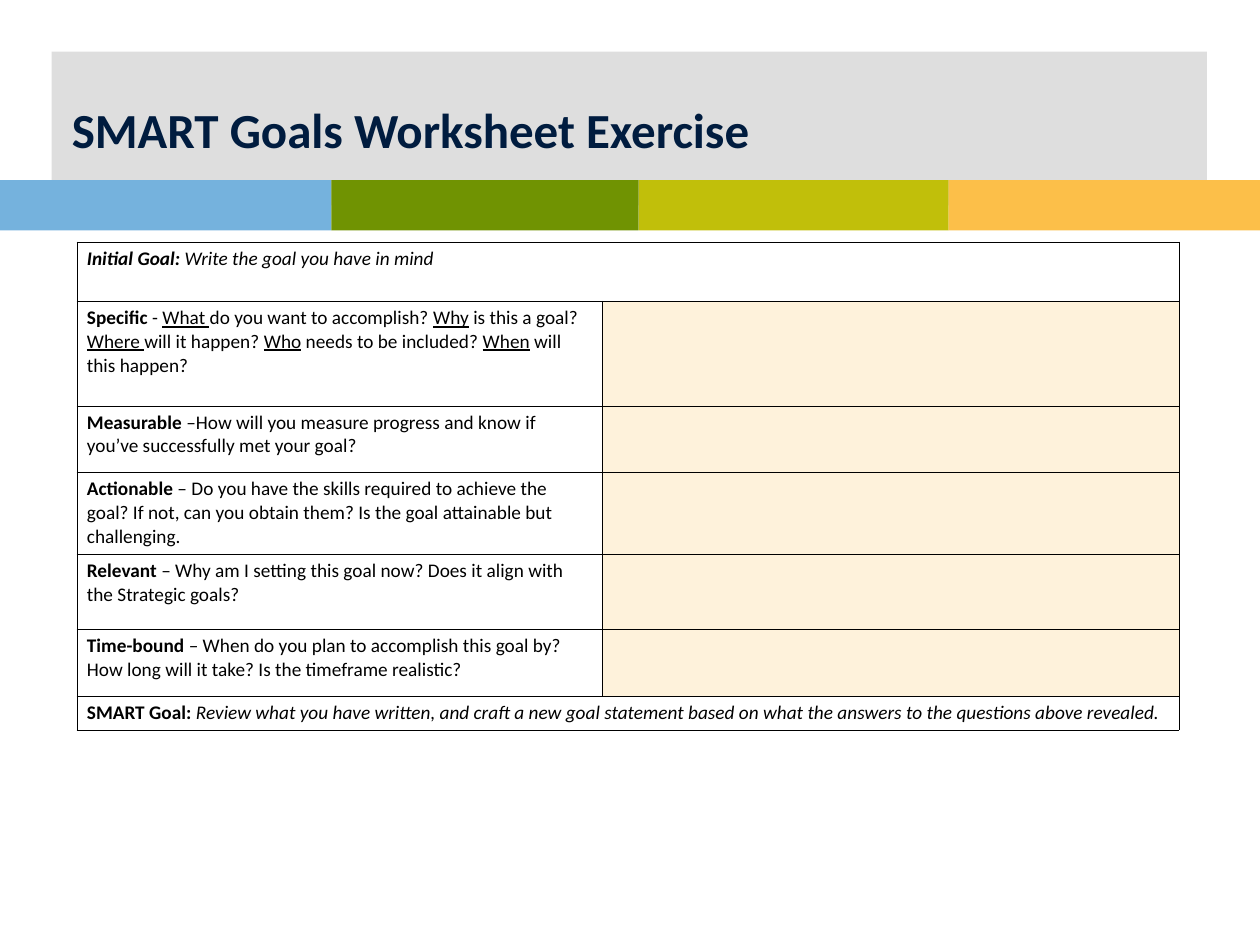
from itertools import pairwise

from lxml import etree
from pptx import Presentation
from pptx.dml.color import RGBColor
from pptx.enum.shapes import MSO_SHAPE
from pptx.enum.text import MSO_ANCHOR, PP_ALIGN
from pptx.oxml.ns import qn
from pptx.util import Inches, Pt

RECTANGLE = MSO_SHAPE.RECTANGLE
MIDDLE = MSO_ANCHOR.MIDDLE
LEFT = PP_ALIGN.LEFT
TITLE_ONLY = 5

FONT = "Calibri"
BLACK, WHITE, NAVY = "000000", "FFFFFF", "001C3F"
HEADER_GREY, ANSWER_CREAM = "DEDEDE", "FEF2DB"

STRIPE_COLORS = ["75B2DD", "709302", "C1BF0A", "FCBF49"]
STRIPE_EDGES = [0, 2.63, 5.07, 7.53, 10]

COLUMN_WIDTHS = [4.17, 4.58]
STYLE_FLAGS = {"b": "bold", "i": "italic", "u": "underline"}
WORKSHEET = [
    (0.47, [("Initial Goal: ", "bi"), ("Write the goal you have in mind", "i")]),
    (0.83, [
        ("Specific ", "b"), ("- ", ""),
        ("What ", "u"), ("do you want to accomplish? ", ""),
        ("Why", "u"), (" is this a goal? ", ""),
        ("Where ", "u"), ("will it happen? ", ""),
        ("Who", "u"), (" needs to be included? ", ""),
        ("When", "u"), (" will this happen?", ""),
    ]),
    (0.53, [("Measurable", "b"),
            (" –How will you measure progress and know if you’ve "
             "successfully met your goal?", "")]),
    (0.64, [("Actionable", "b"),
            (" – Do you have the skills required to achieve the goal? If not, "
             "can you obtain them? Is the goal attainable but challenging.", "")]),
    (0.6, [("Relevant", "b"),
           (" – Why am I setting this goal now? Does it align with the "
            "Strategic goals?", "")]),
    (0.53, [("Time-bound", "b"),
            (" – When do you plan to accomplish this goal by? How long will it "
             "take? Is the timeframe realistic?", "")]),
    (0.26, [("SMART Goal: ", "b"),
            ("Review what you have written, and craft a new goal statement based "
             "on what the answers to the questions above revealed.", "i")]),
]


def rgb(color):
    return RGBColor.from_string(color)


def set_attributes(target, values):
    for name, value in values.items():
        setattr(target, name, value)


def format_font(font, size, color, **flags):
    set_attributes(font, {"name": FONT, "size": Pt(size), **flags})
    font.color.rgb = rgb(color)


def add_block(slide, left, top, width, height, color):
    block = slide.shapes.add_shape(
        RECTANGLE, Inches(left), Inches(top), Inches(width), Inches(height))
    block.shadow.inherit = False
    block.fill.solid()
    block.fill.fore_color.rgb = rgb(color)
    block.line.fill.background()


def add_stripes(slide, top, height):
    for (start, end), color in zip(pairwise(STRIPE_EDGES), STRIPE_COLORS):
        add_block(slide, start, top, end - start, height, color)


def place_title(slide, left, top, width, height):
    title = slide.shapes.title
    slide.shapes._spTree.append(title._element)
    set_attributes(title, {"left": Inches(left), "top": Inches(top),
                           "width": Inches(width), "height": Inches(height)})
    frame = title.text_frame
    set_attributes(frame, {"word_wrap": True, "vertical_anchor": MIDDLE})
    paragraph = frame.paragraphs[0]
    paragraph.alignment = LEFT
    run = paragraph.add_run()
    run.text = "SMART Goals Worksheet Exercise"
    format_font(run.font, 28, NAVY, bold=True)


def add_borders(cell):
    properties = cell._tc.get_or_add_tcPr()
    for side in ("lnL", "lnR", "lnT", "lnB"):
        border = etree.SubElement(properties, qn(f"a:{side}"), w=str(Pt(0.25)))
        fill = etree.SubElement(border, qn("a:solidFill"))
        etree.SubElement(fill, qn("a:srgbClr"), val=BLACK)


def format_cell(cell, color):
    set_attributes(cell, {"margin_left": Inches(0.08), "margin_right": Inches(0.08),
                          "margin_top": Inches(0.04), "margin_bottom": Inches(0.04)})
    add_borders(cell)
    cell.fill.solid()
    cell.fill.fore_color.rgb = rgb(color)
    format_font(cell.text_frame.paragraphs[0].font, 11, BLACK)


def write_prompt(cell, parts):
    paragraph = cell.text_frame.paragraphs[0]
    for text, style in parts:
        run = paragraph.add_run()
        run.text = text
        flags = {name: key in style for key, name in STYLE_FLAGS.items()}
        format_font(run.font, 11, BLACK, **flags)


def add_worksheet(slide, left, top):
    total_height = sum(height for height, _ in WORKSHEET)
    table = slide.shapes.add_table(
        len(WORKSHEET), len(COLUMN_WIDTHS), Inches(left), Inches(top),
        Inches(sum(COLUMN_WIDTHS)), Inches(total_height)).table
    set_attributes(table, {"first_row": False, "horz_banding": False})
    for column, width in zip(table.columns, COLUMN_WIDTHS):
        column.width = Inches(width)
    last = len(WORKSHEET) - 1
    for index, (height, parts) in enumerate(WORKSHEET):
        table.rows[index].height = Inches(height)
        prompt, answer = table.cell(index, 0), table.cell(index, 1)
        spans_row = index in (0, last)
        format_cell(prompt, WHITE)
        format_cell(answer, WHITE if spans_row else ANSWER_CREAM)
        if spans_row:
            prompt.merge(answer)
        write_prompt(prompt, parts)


def main():
    presentation = Presentation()
    set_attributes(presentation, {"slide_width": Inches(10), "slide_height": Inches(7.5)})
    slide = presentation.slides.add_slide(presentation.slide_layouts[TITLE_ONLY])
    add_block(slide, 0.41, 0.41, 9.17, 1.22, HEADER_GREY)
    add_stripes(slide, 1.43, 0.4)
    place_title(slide, 0.47, 0.45, 9.53, 1.14)
    add_worksheet(slide, 0.61, 1.92)
    presentation.save("out.pptx")


if __name__ == "__main__":
    main()
